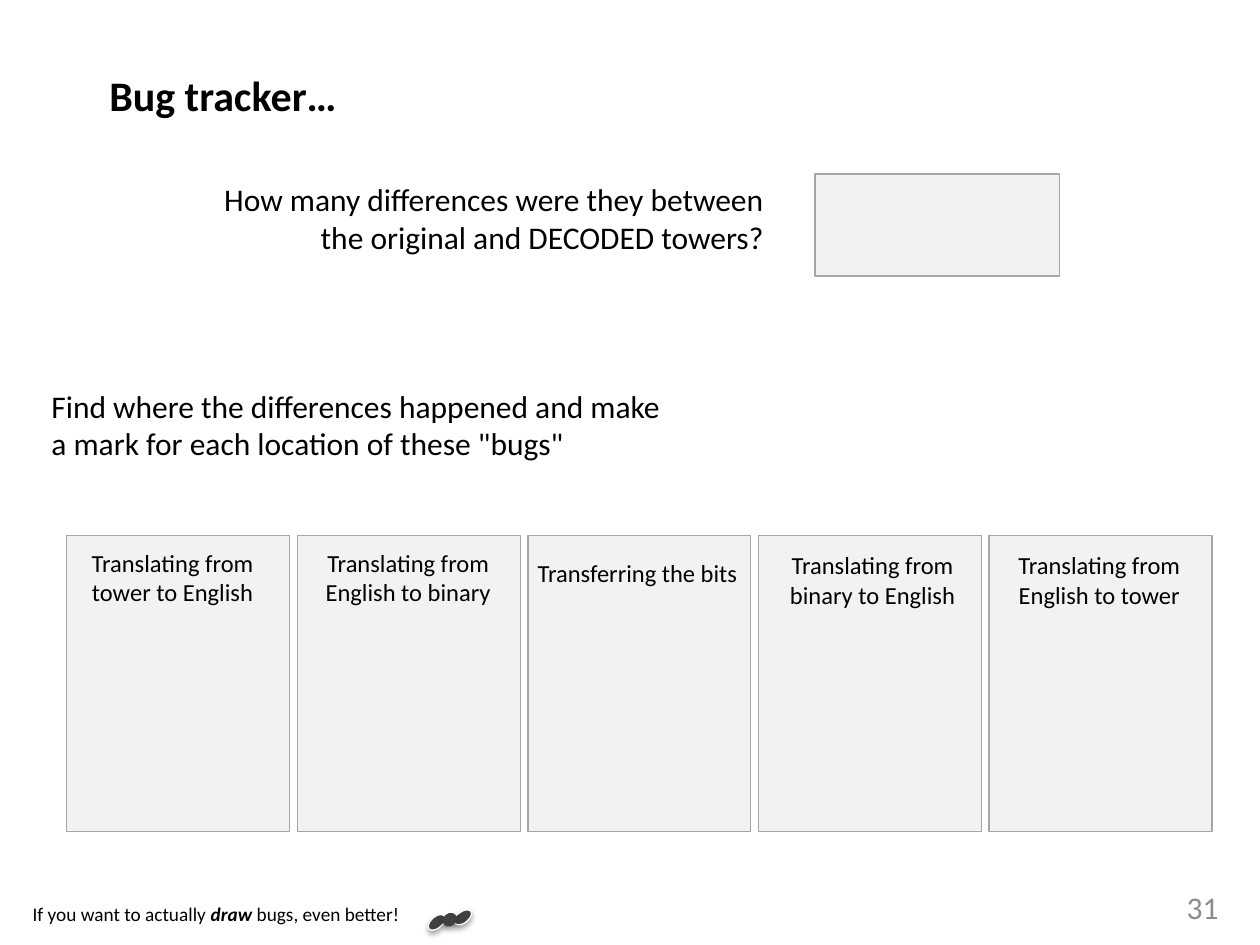
import pptx
import pptx.util
import pptx.dml.color
import pptx.enum.shapes
import pptx.enum.text
import pptx.oxml
import pptx.oxml.ns

Pt = pptx.util.Pt
SHAPE = pptx.enum.shapes.MSO_SHAPE
ALIGN = pptx.enum.text.PP_ALIGN
ANCHOR = pptx.enum.text.MSO_ANCHOR
COLORS = {"text": "000000", "number": "8C8C8C", "box": "F2F2F2",
          "border": "A6A6A6", "bug": "404040", "outline": "FFFFFF"}
SHADOW = (
    f"<a:effectLst {pptx.oxml.ns.nsdecls('a')}>"
    '<a:outerShdw blurRad="39400" dist="22900" dir="5400000" rotWithShape="0">'
    '<a:srgbClr val="000000"><a:alpha val="35000"/></a:srgbClr>'
    "</a:outerShdw></a:effectLst>"
)


def rgb(name):
    return pptx.dml.color.RGBColor.from_string(COLORS[name])


def add_text(s, x, y, w, h, runs, size, align=ALIGN.LEFT, color="text",
             wrap=True, anchor=ANCHOR.TOP):
    tf = s.shapes.add_textbox(Pt(x), Pt(y), Pt(w), Pt(h)).text_frame
    tf.word_wrap = wrap
    tf.vertical_anchor = anchor
    p = tf.paragraphs[0]
    p.alignment = align
    p.font.size = Pt(size)
    p.font.name = "Calibri"
    p.font.color.rgb = rgb(color)
    for text, bold, italic in runs:
        r = p.add_run()
        r.text = text
        r.font.bold = bold
        r.font.italic = italic


def add_plain(s, x, y, w, h, text, size, **options):
    add_text(s, x, y, w, h, [(text, False, False)], size, **options)


def add_box(shapes, x, y, w, h, kind=SHAPE.RECTANGLE, fill="box", line="border"):
    sp = shapes.add_shape(kind, Pt(x), Pt(y), Pt(w), Pt(h))
    sp.shadow.inherit = False
    sp.fill.solid()
    sp.fill.fore_color.rgb = rgb(fill)
    if line:
        sp.line.color.rgb = rgb(line)
        sp.line.width = Pt(0.75)
    else:
        sp.line.fill.background()
    return sp


def add_question(s, x, y, w, h):
    add_plain(s, x, y, 346.3, 51,
              "How many differences were they between the original and DECODED towers?",
              18, align=ALIGN.RIGHT)
    add_box(s.shapes, x + w - 139.7, y, 139.7, h)


def add_columns(s, x, y, w, h):
    labels = [
        ("Translating from tower to English", 0.7, 3.6, 119.5),
        ("Translating from English to binary", 7.2, 3.6, 112.3),
        ("Transferring the bits", -2.9, 9.4, 131),
        ("Translating from binary to English", 6.5, 5, 117.4),
        ("Translating from English to tower", 4.3, 5, 117.4),
    ]
    col_w = 127.4
    pitch = (w - col_w) / (len(labels) - 1)
    for i, (label, dx, dy, label_w) in enumerate(labels):
        left = x + i * pitch
        add_box(s.shapes, left, y, col_w, h)
        add_plain(s, left + dx, y + dy, label_w, 41, label, 14, align=ALIGN.CENTER)


def add_bug(s, x, y):
    grp = s.shapes.add_group_shape()
    parts = [
        (SHAPE.TEAR, 0, 2.9, 6.5, 11.5, 48.3, "outline"),
        (SHAPE.TEAR, 15.1, 0, 6.5, 11.5, 232.9, "outline"),
        (SHAPE.OVAL, 7.2, 2.9, 7.2, 8.6, 48.3, None),
    ]
    for kind, dx, dy, w, h, angle, line in parts:
        sp = add_box(grp.shapes, x + dx, y + dy, w, h, kind, "bug", line)
        sp.rotation = angle
        spPr = sp._element.spPr
        spPr.replace(spPr.find(pptx.oxml.ns.qn("a:effectLst")),
                     pptx.oxml.parse_xml(SHADOW))


def add_footer(s, x, y, w, h):
    add_text(s, x, y + 7.9, 226, 20.9,
             [("If you want to actually ", False, False), ("draw ", True, True),
              ("bugs, even better!", False, False)], 11, wrap=False)
    add_bug(s, x + 234.7, y + 14.4)
    add_plain(s, x + w - 167.8, y, 167.8, h, "31", 18, align=ALIGN.RIGHT,
              color="number", anchor=ANCHOR.MIDDLE)


def main():
    prs = pptx.Presentation()
    prs.slide_width, prs.slide_height = Pt(720), Pt(540)
    s = prs.slides.add_slide(prs.slide_layouts[6])
    add_text(s, 55.4, 36, 149, 36, [("Bug tracker…", True, False)], 24, wrap=False)
    add_question(s, 97.2, 99.4, 508.3, 58.3)
    add_plain(s, 22.3, 217.4, 374.4, 51,
              'Find where the differences happened and make a mark for each '
              'location of these "bugs"', 18)
    add_columns(s, 38.2, 306, 654.4, 169.2)
    add_footer(s, 11.5, 504, 691.9, 28.8)
    prs.save("out.pptx")


if __name__ == "__main__":
    main()
